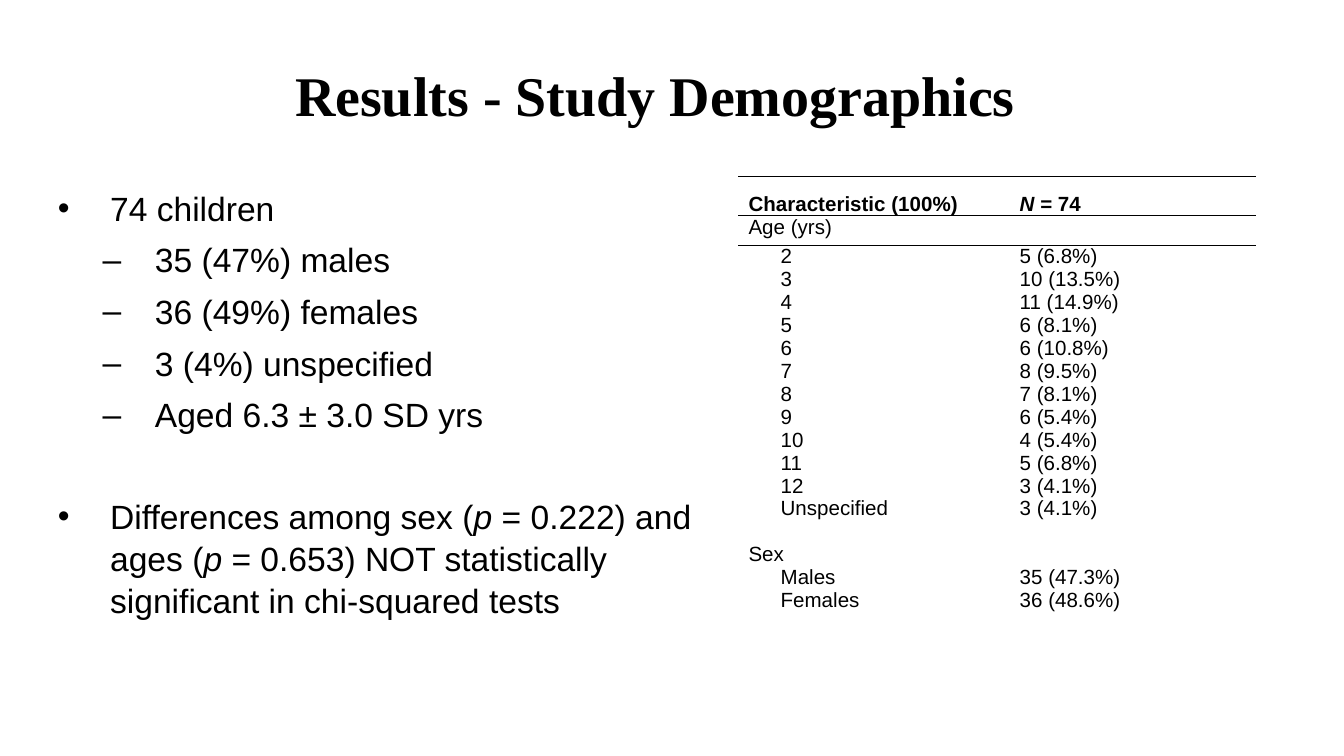
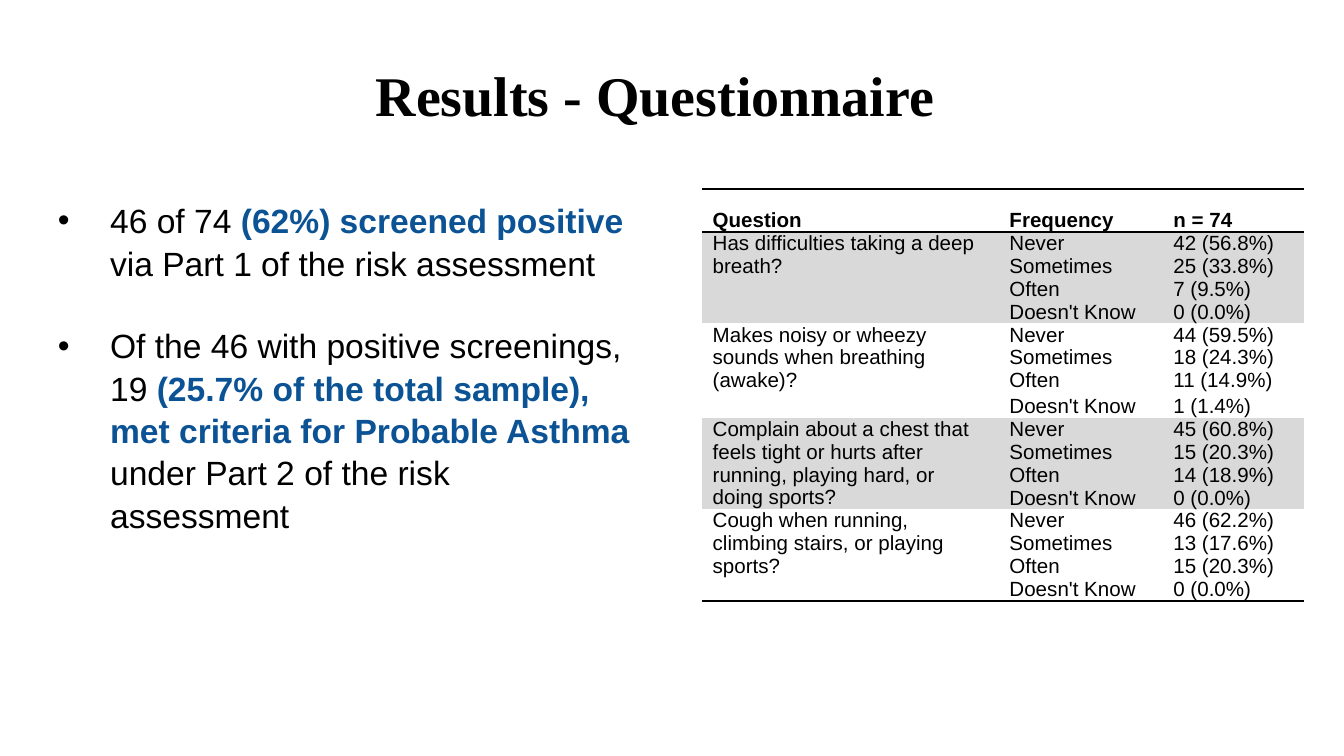
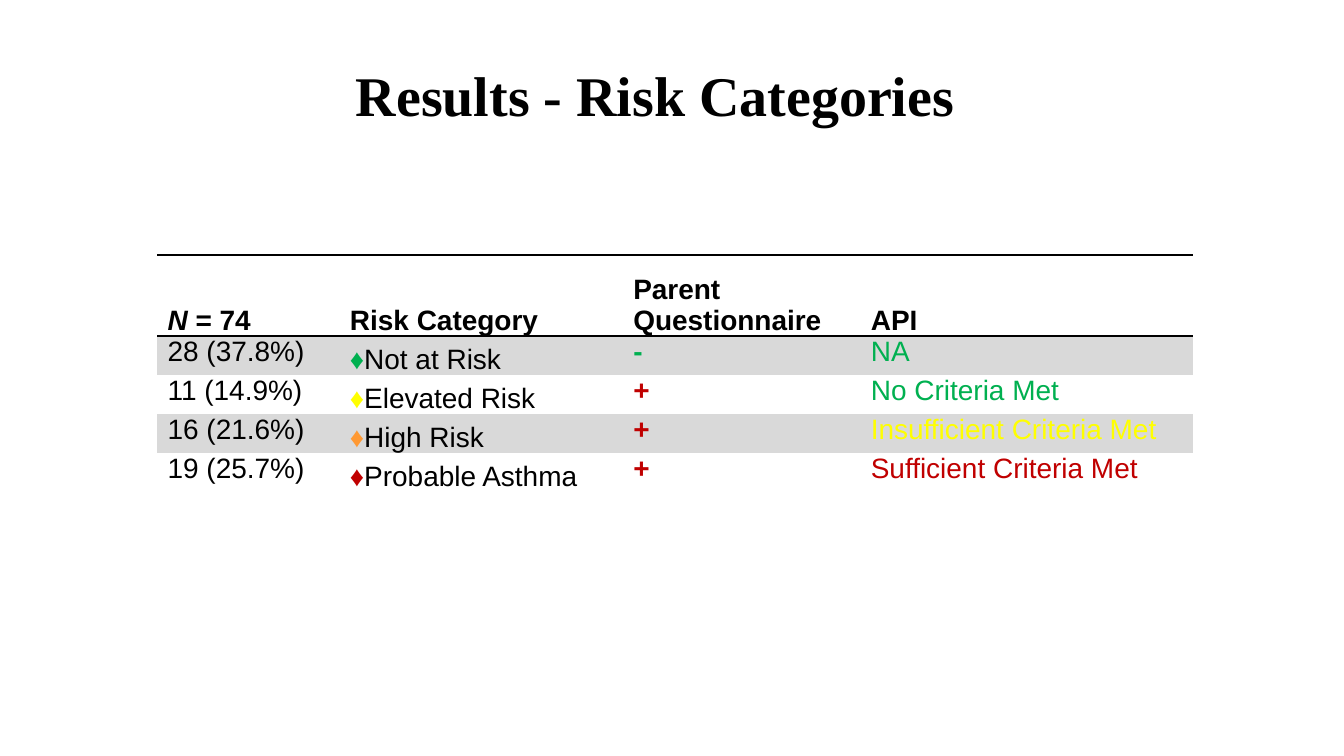
from dataclasses import dataclass
from typing import Optional

from lxml.etree import SubElement, fromstring
from pptx import Presentation
from pptx.dml.color import RGBColor
from pptx.enum.text import MSO_ANCHOR as Anchor, MSO_AUTO_SIZE as AutoSize, PP_ALIGN as Align
from pptx.oxml.ns import nsdecls, qn
from pptx.util import Pt


@dataclass(frozen=True)
class Theme:
    ink: str = "000000"
    blue: str = "0B5394"
    band: str = "D9D9D9"
    green: str = "00B050"
    yellow: str = "FFFF00"
    orange: str = "FF9933"
    red: str = "C00000"
    title_font: str = "Times New Roman"
    body_font: str = "Arial"
    title_size: float = 30
    body_size: float = 18
    table_size: float = 11
    large_table_size: float = 15
    line_spacing: float = 1.05
    inset: float = 5
    cell_inset: float = 5.6
    rule_width: float = 1
    plain_style: str = "{2D5ABB26-0587-4C30-8999-92F81FD0307C}"


THEME = Theme()
TITLE_ONLY = 5
BULLETS = (("•", 36, -28), ("–", 60, -28))
TABLE_LINE = 12.3


@dataclass(frozen=True)
class Span:
    text: str
    color: str = THEME.ink
    bold: bool = False
    italic: bool = False


@dataclass(frozen=True)
class Bullet:
    content: object
    level: int = 0
    before: Optional[float] = None
    after: float = 0


def write_spans(para, content, size, bold=False):
    spans = [Span(content)] if isinstance(content, str) else content
    for span in spans:
        run = para.add_run()
        run.text = span.text
        run.font.name = THEME.body_font
        run.font.size = Pt(size)
        run.font.bold = bold or span.bold
        run.font.italic = span.italic
        run.font.color.rgb = RGBColor.from_string(span.color)


def set_insets(frame):
    frame.margin_left = frame.margin_right = Pt(THEME.inset)
    frame.margin_top = frame.margin_bottom = Pt(THEME.inset)
    frame.word_wrap = True
    frame.auto_size = AutoSize.NONE


def add_page(deck, title):
    page = deck.slides.add_slide(deck.slide_layouts[TITLE_ONLY])
    box = page.shapes.title
    box.left, box.top, box.width, box.height = Pt(18), Pt(16.5), Pt(666), Pt(68)
    frame = box.text_frame
    set_insets(frame)
    frame.vertical_anchor = Anchor.MIDDLE
    frame.text = title
    para = frame.paragraphs[0]
    para.alignment = Align.CENTER
    font = para.runs[0].font
    font.name, font.size, font.bold = THEME.title_font, Pt(THEME.title_size), True
    font.color.rgb = RGBColor.from_string(THEME.ink)
    return page


def mark_bullet(para, level):
    symbol, margin, indent = BULLETS[level]
    para.level = level
    props = para._p.get_or_add_pPr()
    props.set("marL", str(Pt(margin)))
    props.set("indent", str(Pt(indent)))
    SubElement(SubElement(props, qn("a:buClr")), qn("a:srgbClr"), val=THEME.ink)
    SubElement(props, qn("a:buFont"), typeface=THEME.body_font)
    SubElement(props, qn("a:buChar"), char=symbol)


def add_bullets(page, top, width, height, bullets):
    box = page.shapes.add_textbox(Pt(18), Pt(top), Pt(width), Pt(height))
    frame = box.text_frame
    set_insets(frame)
    for index, bullet in enumerate(bullets):
        para = frame.add_paragraph() if index else frame.paragraphs[0]
        mark_bullet(para, bullet.level)
        para.line_spacing = THEME.line_spacing
        para.space_after = Pt(bullet.after)
        if bullet.before:
            para.space_before = Pt(bullet.before)
        write_spans(para, bullet.content, THEME.body_size)


def draw_rules(cell, *edges):
    props = cell._tc.get_or_add_tcPr()
    for position, edge in enumerate(edges):
        props.insert(position, fromstring(
            f'<a:{edge} {nsdecls("a")} w="{Pt(THEME.rule_width)}"><a:solidFill>'
            f'<a:srgbClr val="{THEME.ink}"/></a:solidFill></a:{edge}>'))


def fill_cell(cell, content, size, header, shaded):
    cell.margin_left = cell.margin_right = Pt(THEME.cell_inset)
    cell.margin_top = cell.margin_bottom = 0
    cell.vertical_anchor = Anchor.BOTTOM if header else Anchor.TOP
    if shaded:
        cell.fill.solid()
        cell.fill.fore_color.rgb = RGBColor.from_string(THEME.band)
    else:
        cell.fill.background()
    para = cell.text_frame.paragraphs[0]
    if content:
        write_spans(para, content, size, bold=header)
    else:
        SubElement(para._p, qn("a:endParaRPr"), sz=str(size * 100))
    if header:
        draw_rules(cell, "lnT", "lnB")


def add_grid(page, left, top, widths, heights, rows, size, band=0):
    box = page.shapes.add_table(len(rows), len(widths), Pt(left), Pt(top),
                                Pt(sum(widths)), Pt(sum(heights)))
    grid = box.table
    grid.first_row = grid.horz_banding = False
    grid._tbl.tblPr.find(qn("a:tableStyleId")).text = THEME.plain_style
    for column, width in zip(grid.columns, widths):
        column.width = Pt(width)
    for index, (row, height, contents) in enumerate(zip(grid.rows, heights, rows)):
        row.height = Pt(height)
        shaded = index > 0 and band > 0 and (index - 1) // band % 2 == 0
        for cell, content in zip(row.cells, contents):
            fill_cell(cell, content, size, index == 0, shaded)
    return grid


def build_demographics(deck):
    page = add_page(deck, "Results - Study Demographics")
    p_value = Span("p ", italic=True)
    sexes = ("35 (47%) males", "36 (49%) females", "3 (4%) unspecified",
             "Aged 6.3 ± 3.0 SD yrs")
    add_bullets(page, 94.5, 363.5, 240, [
        Bullet("74 children", after=5),
        *[Bullet(text, level=1, after=5) for text in sexes],
        Bullet([Span("Differences among sex ("), p_value,
                Span("= 0.222) and ages ("), p_value,
                Span("= 0.653) NOT statistically significant in chi-squared tests")],
               before=26.5, after=5)])

    ages = [("2", "5 (6.8%)"), ("3", "10 (13.5%)"), ("4", "11 (14.9%)"),
            ("5", "6 (8.1%)"), ("6", "6 (10.8%)"), ("7", "8 (9.5%)"),
            ("8", "7 (8.1%)"), ("9", "6 (5.4%)"), ("10", "4 (5.4%)"),
            ("11", "5 (6.8%)"), ("12", "3 (4.1%)"), ("Unspecified", "3 (4.1%)")]
    rows = [("Characteristic (100%)", [Span("N ", italic=True), Span("= 74")]),
            ("Age (yrs)", ""), *ages, ("Sex", ""),
            ("Males", "35 (47.3%)"), ("Females", "36 (48.6%)")]
    heights = [21, 16] + [TABLE_LINE] * len(ages) + [2 * TABLE_LINE] + [TABLE_LINE] * 2
    grid = add_grid(page, 395.4, 94.5, (145.3, 132.3), heights, rows, THEME.table_size)
    for cell in grid.rows[1].cells:
        draw_rules(cell, "lnB")
    for index, (label, value) in enumerate(rows):
        cell = grid.cell(index, 0)
        if label == "Sex":
            cell.vertical_anchor = Anchor.BOTTOM
        elif index and value:
            props = cell.text_frame.paragraphs[0]._p.get_or_add_pPr()
            props.set("marL", str(Pt(17.2)))


def build_questionnaire(deck):
    page = add_page(deck, "Results - Questionnaire")
    answers = ("Never", "Sometimes", "Often", "Doesn't Know")
    questions = [
        ("Has difficulties taking a deep breath?",
         ("42 (56.8%)", "25 (33.8%)", "7 (9.5%)", "0 (0.0%)")),
        ("Makes noisy or wheezy sounds when breathing (awake)?",
         ("44 (59.5%)", "18 (24.3%)", "11 (14.9%)", "1 (1.4%)")),
        ("Complain about a chest that feels tight or hurts after running, "
         "playing hard, or doing sports?",
         ("45 (60.8%)", "15 (20.3%)", "14 (18.9%)", "0 (0.0%)")),
        ("Cough when running, climbing stairs, or playing sports?",
         ("46 (62.2%)", "13 (17.6%)", "15 (20.3%)", "0 (0.0%)"))]
    rows = [("Question", "Frequency", "n = 74")]
    for question, counts in questions:
        for index, (answer, count) in enumerate(zip(answers, counts)):
            rows.append(("" if index else question, answer, count))
    heights = [23] + [TABLE_LINE] * (len(rows) - 1)
    heights[7] = 13.7
    grid = add_grid(page, 376.2, 101.2, (159, 87.8, 75.6), heights, rows,
                    THEME.table_size, band=len(answers))
    for first in range(1, len(rows), len(answers)):
        grid.cell(first, 0).merge(grid.cell(first + len(answers) - 1, 0))
    for cell in (grid.cell(first, 0), *grid.rows[len(rows) - 1].cells):
        draw_rules(cell, "lnB")

    add_bullets(page, 101.2, 326, 165.5, [
        Bullet([Span("46 of 74 "),
                Span("(62%) screened positive ", THEME.blue, bold=True),
                Span("via Part 1 of the risk assessment")]),
        Bullet([Span("Of the 46 with positive screenings, 19 "),
                Span("(25.7% of the total sample), met criteria for Probable Asthma ",
                     THEME.blue, bold=True),
                Span("under Part 2 of the risk assessment")], before=21.7)])


def build_risk_categories(deck):
    page = add_page(deck, "Results - Risk Categories")
    categories = [
        ("28 (37.8%)", THEME.green, "Not at Risk", "-", THEME.green, "NA", THEME.green),
        ("11 (14.9%)", THEME.yellow, "Elevated Risk", "+", THEME.red,
         "No Criteria Met", THEME.green),
        ("16 (21.6%)", THEME.orange, "High Risk", "+", THEME.red,
         "Insufficient Criteria Met", THEME.yellow),
        ("19 (25.7%)", THEME.red, "Probable Asthma", "+", THEME.red,
         "Sufficient Criteria Met", THEME.red)]
    rows = [([Span("N", italic=True), Span(" = 74")], "Risk Category",
             "Parent Questionnaire", "API")]
    for count, marker, risk, sign, sign_color, criteria, criteria_color in categories:
        rows.append((count, [Span("♦", marker), Span(risk)],
                     [Span(sign, sign_color, bold=True)], [Span(criteria, criteria_color)]))
    heights = [43.4] + [20.9] * len(categories)
    grid = add_grid(page, 84.2, 136.6, (97.7, 151.8, 127.3, 178.4), heights, rows,
                    THEME.large_table_size, band=1)
    for index in range(1, len(rows)):
        grid.cell(index, 1).vertical_anchor = Anchor.BOTTOM


def main():
    deck = Presentation()
    deck.slide_width, deck.slide_height = Pt(720), Pt(405)
    build_demographics(deck)
    build_questionnaire(deck)
    build_risk_categories(deck)
    deck.save("out.pptx")


if __name__ == "__main__":
    main()
